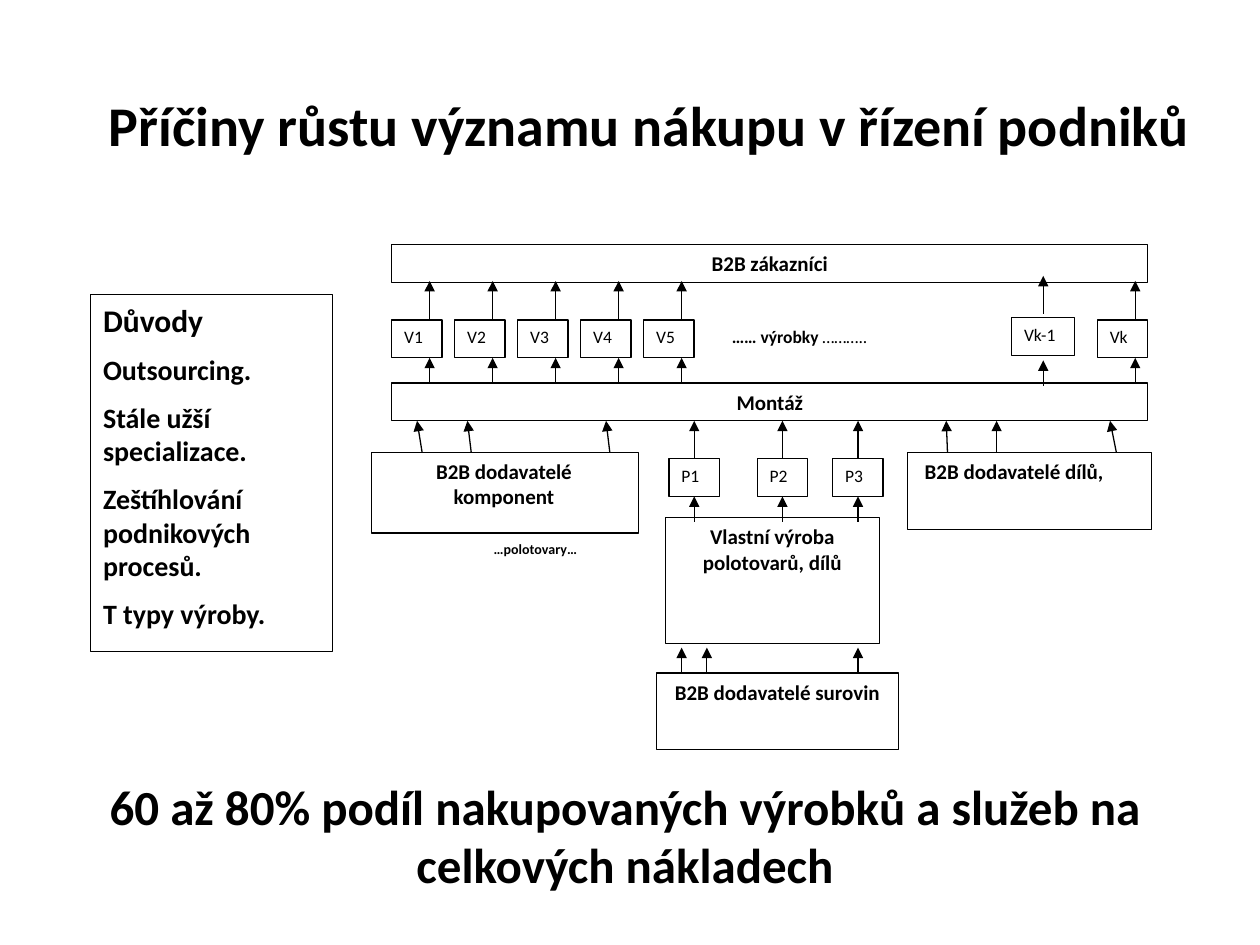
from lxml.etree import SubElement
from pptx import Presentation
from pptx.dml.color import RGBColor
from pptx.enum.shapes import MSO_CONNECTOR as Link, MSO_SHAPE as Kind
from pptx.enum.text import MSO_ANCHOR as Anchor, PP_ALIGN as Align
from pptx.oxml.ns import qn
from pptx.util import Inches, Pt

BLACK = RGBColor(0, 0, 0)
WHITE = RGBColor(255, 255, 255)
THIN = Pt(0.75)
SIDE = Inches(0.1)
EDGE = Inches(0.05)


def apply(item, values):
    for name, value in values.items():
        setattr(item, name, value)


def place(shape, left, top, width, height):
    apply(shape, dict(left=Inches(left), top=Inches(top),
                      width=Inches(width), height=Inches(height)))


def write(shape, paras, align=Align.LEFT, gap=0):
    """Each paragraph is a list of (text, size, bold) runs."""
    frame = shape.text_frame
    apply(frame, dict(word_wrap=True, vertical_anchor=Anchor.TOP,
                      margin_left=SIDE, margin_right=SIDE,
                      margin_top=EDGE, margin_bottom=EDGE))
    for i, runs in enumerate(paras):
        para = frame.paragraphs[0] if i == 0 else frame.add_paragraph()
        apply(para, dict(alignment=align, space_before=Pt(gap if i else 0)))
        for text, size, bold in runs:
            run = para.add_run()
            run.text = text
            apply(run.font, dict(name="Calibri", size=Pt(size), bold=bold))
            run.font.color.rgb = BLACK


def add_box(slide, spot, paras, align=Align.LEFT, gap=0, lined=True):
    box = slide.shapes.add_shape(Kind.RECTANGLE, *map(Inches, spot))
    box.shadow.inherit = False
    box.fill.solid()
    box.fill.fore_color.rgb = WHITE
    if lined:
        box.line.color.rgb = BLACK
        box.line.width = THIN
    else:
        box.line.fill.background()
    write(box, paras, align, gap)
    return box


def add_head(slide, text, *spot):
    return add_box(slide, spot, [[(text, 12, True)]], Align.CENTER)


def add_tag(slide, text, left, top, width=0.4):
    add_box(slide, (left, top, width, 0.3), [[(text, 10, False)]])


def add_arrow(slide, x, low, high, lean=0):
    """Arrow that points up from low to high, ending lean further left."""
    line = slide.shapes.add_connector(
        Link.STRAIGHT, *map(Inches, (x, low, x - lean, high)))
    line.line.color.rgb = BLACK
    line.line.width = THIN
    SubElement(line.line._get_or_add_ln(), qn("a:tailEnd"), type="triangle")
    SubElement(line._element.spPr, qn("a:effectLst"))


def add_boxes(slide):
    # Wide bars
    add_head(slide, "B2B zákazníci", 3.11, 1.94, 6, 0.3)
    add_head(slide, "Montáž", 3.11, 3.04, 6, 0.3)

    # Products and parts
    for i in range(5):
        add_tag(slide, f"V{i + 1}", 3.11 + 0.5 * i, 2.54)
    add_box(slide, (5.71, 2.54, 2.3, 0.3),
            [[("…… výrobky ", 10, True), ("………..", 10, False)]], lined=False)
    add_tag(slide, "Vk-1", 8.03, 2.52, 0.5)
    add_tag(slide, "Vk", 8.71, 2.54)
    for i, x in enumerate((5.31, 6.01, 6.61), 1):
        add_tag(slide, f"P{i}", x, 3.64)

    # Suppliers and own production; wider margins set wrap and centre
    comp = add_head(slide, "B2B dodavatelé komponent", 2.95, 3.59, 2.12, 0.64)
    apply(comp.text_frame, dict(margin_left=Inches(0.3),
                                margin_right=Inches(0.32)))
    dily = add_head(slide, "B2B dodavatelé dílů,", 7.2, 3.59, 1.94, 0.61)
    dily.text_frame.margin_right = Inches(0.34)
    add_head(slide, "B2B dodavatelé surovin", 5.21, 5.34, 1.92, 0.61)
    add_head(slide, "Vlastní výroba polotovarů, dílů", 5.28, 4.11, 1.7, 1)
    add_box(slide, (3.82, 4.24, 0.94, 0.3),
            [[("…polotovary…", 8, True)]], lined=False)


def add_arrows(slide):
    # Assembly to products to customers
    for x in (3.41, 3.91, 4.41, 4.91, 5.41, 9.01):
        add_arrow(slide, x, 3.04, 2.84)
        add_arrow(slide, x, 2.53, 2.23)
    add_arrow(slide, 8.28, 3.06, 2.86)
    add_arrow(slide, 8.28, 2.49, 2.19)

    # Suppliers to assembly
    for x, lean in ((3.35, 0.04), (3.74, 0.03), (4.84, 0.03),
                    (7.52, 0.01), (7.91, 0), (8.86, 0.05)):
        add_arrow(slide, x, 3.59, 3.34, lean)

    # Own production to parts to assembly
    for x in (5.51, 6.21, 6.81):
        add_arrow(slide, x, 4.14, 3.94)
        add_arrow(slide, x, 3.64, 3.34)

    # Raw materials to own production
    for x in (5.41, 5.61, 6.81):
        add_arrow(slide, x, 5.34, 5.14)


def main():
    deck = Presentation()
    apply(deck, dict(slide_width=Inches(10), slide_height=Inches(7.5)))
    slide = deck.slides.add_slide(deck.slide_layouts[5])

    # Title
    title = slide.shapes.title
    place(title, 0.43, 0.67, 9.45, 0.64)
    write(title, [[("Příčiny růstu významu nákupu v řízení podniků", 32, True)]],
          Align.CENTER)

    # Reasons
    lines = ("Outsourcing.", "Stále užší specializace.",
             "Zeštíhlování podnikových procesů.", "T typy výroby.")
    add_box(slide, (0.72, 2.34, 1.92, 2.83),
            [[("Důvody", 18, True)]] + [[(text, 16, True)] for text in lines],
            gap=8)

    # Supply diagram
    add_boxes(slide)
    add_arrows(slide)

    # Conclusion
    add_box(slide, (0.51, 6.11, 8.9, 1.04),
            [[("60 až 80% podíl nakupovaných výrobků a služeb na "
               "celkových nákladech", 28, True)]], Align.CENTER, lined=False)
    deck.save("out.pptx")


if __name__ == "__main__":
    main()
